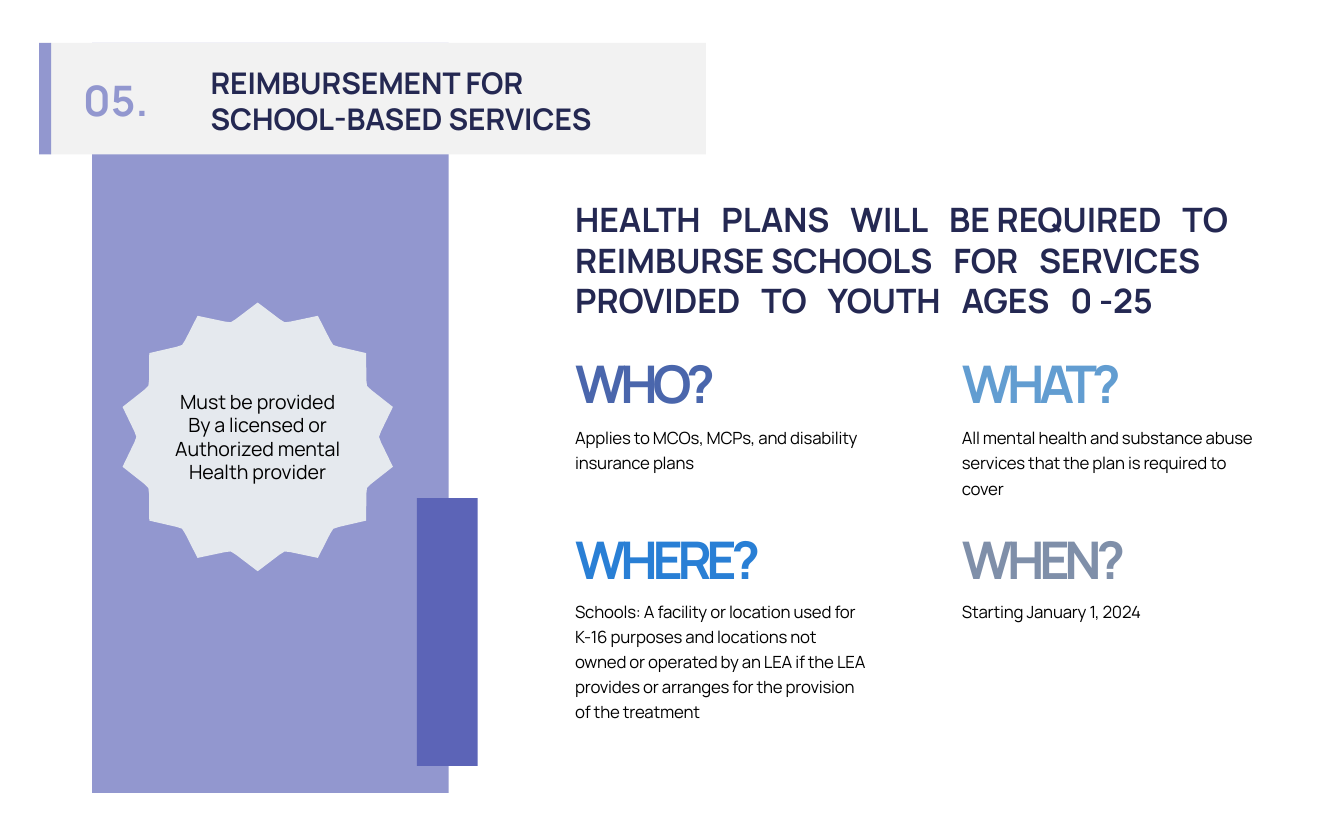
from math import cos, pi, sin

from pptx import Presentation
from pptx.dml.color import RGBColor
from pptx.enum.shapes import MSO_SHAPE
from pptx.enum.text import MSO_ANCHOR, MSO_AUTO_SIZE, PP_ALIGN
from pptx.util import Cm, Pt

RECT = MSO_SHAPE.RECTANGLE
TOP, MIDDLE, BOTTOM = MSO_ANCHOR.TOP, MSO_ANCHOR.MIDDLE, MSO_ANCHOR.BOTTOM
LEFT, CENTER = PP_ALIGN.LEFT, PP_ALIGN.CENTER
GROW = MSO_AUTO_SIZE.SHAPE_TO_FIT_TEXT

FONT = "Manrope"
BLACK = RGBColor(0x00, 0x00, 0x00)
NAVY = RGBColor(0x24, 0x28, 0x52)
LAVENDER = RGBColor(0x92, 0x97, 0xCF)
INDIGO = RGBColor(0x5C, 0x64, 0xB7)
LIGHT_GREY = RGBColor(0xF2, 0xF2, 0xF2)
PALE = RGBColor(0xE5, 0xE9, 0xEE)
WHO_BLUE = RGBColor(0x4A, 0x66, 0xAC)
WHAT_BLUE = RGBColor(0x62, 0x9D, 0xD1)
WHERE_BLUE = RGBColor(0x29, 0x7F, 0xD5)
WHEN_GREY = RGBColor(0x7F, 0x8F, 0xA9)

NUMBER = "05."
TITLE = "REIMBURSEMENT FOR SCHOOL-BASED SERVICES"
# Each line is a list of phrases set apart by wide gaps
STATEMENT = [
    ["HEALTH", "PLANS", "WILL", "BE REQUIRED", "TO"],
    ["REIMBURSE SCHOOLS", "FOR", "SERVICES"],
    ["PROVIDED", "TO", "YOUTH", "AGES", "0 -25"],
]
BADGE = ["Must be provided", "By a licensed or", "Authorized mental", "Health provider"]
# Question, colour, answer, lines in the answer; row by row
QUESTIONS = [
    [("WHO?", WHO_BLUE, "Applies to MCOs, MCPs, and disability insurance plans", 2),
     ("WHAT?", WHAT_BLUE, "All mental health and substance abuse services that "
      "the plan is required to cover", 3)],
    [("WHERE?", WHERE_BLUE, "Schools: A facility or location used for K-16 purposes "
      "and locations not owned or operated by an LEA if the LEA provides or arranges "
      "for the provision of the treatment", 5),
     ("WHEN?", WHEN_GREY, "Starting January 1, 2024", 1)],
]
COLUMNS = [10.62, 17.93]
ROWS = [(6.5, 7.87), (9.83, 11.15)]  # tops of question and answer

prs = Presentation()
prs.slide_width, prs.slide_height = Cm(25.4), Cm(15.88)
s = prs.slides.add_slide(prs.slide_layouts[6])


def paint(sp, color):
    sp.shadow.inherit = False
    sp.fill.solid()
    sp.fill.fore_color.rgb = color
    sp.line.fill.background()


def add_rect(x, y, w, h, color):
    paint(s.shapes.add_shape(RECT, Cm(x), Cm(y), Cm(w), Cm(h)), color)


def add_run(p, text, size, color=BLACK, bold=False, spacing=0):
    r = p.add_run()
    r.text = text
    f = r.font
    f.name, f.size, f.bold, f.color.rgb = FONT, Pt(size), bold, color
    if spacing:
        r._r.get_or_add_rPr().set("spc", str(round(spacing * 100)))


def add_text(x, y, w, h, text="", anchor=TOP, align=LEFT, wrap=True, leading=None, **style):
    tf = s.shapes.add_textbox(Cm(x), Cm(y), Cm(w), Cm(h)).text_frame
    tf.word_wrap, tf.vertical_anchor, tf.auto_size = wrap, anchor, GROW
    p = tf.paragraphs[0]
    p.alignment = align
    if leading:
        p.line_spacing = Pt(leading)
    if text:
        add_run(p, text, **style)
    return p


def add_badge(cx, cy, rx, ry, tips=14):
    """Star with pointed tips and softened inner corners."""
    outline = [(0, 1), (0.4, 0.89), (0.5, 0.875), (0.6, 0.89)]  # share of a tip, radius
    points = []
    for tip in range(tips):
        for share, radius in outline:
            a = 2 * pi * (tip + share) / tips
            points.append((Cm(cx + rx * radius * sin(a)), Cm(cy - ry * radius * cos(a))))
    builder = s.shapes.build_freeform(*points[0])
    builder.add_line_segments(points[1:])
    sp = builder.convert_to_shape()
    paint(sp, PALE)
    tf = sp.text_frame
    tf.word_wrap, tf.vertical_anchor = False, MIDDLE
    for i, line in enumerate(BADGE):
        p = tf.add_paragraph() if i else tf.paragraphs[0]
        p.alignment = CENTER
        add_run(p, line, 10.5)


add_rect(1.74, 0.81, 6.74, 14.18, LAVENDER)
add_rect(7.88, 9.42, 1.15, 5.06, INDIGO)

p = add_text(10.62, 3.61, 14, 2.57, anchor=BOTTOM)
heading = dict(size=18, color=NAVY, bold=True)
for i, phrases in enumerate(STATEMENT):
    if i:
        p.add_line_break()
    for j, phrase in enumerate(phrases):
        if j:
            add_run(p, " ", spacing=7.5, **heading)
        add_run(p, phrase, **heading)

for (question_y, answer_y), row in zip(ROWS, QUESTIONS):
    for x, (question, color, answer, lines) in zip(COLUMNS, row):
        add_text(x, question_y, 6.1, 1.45, question, anchor=BOTTOM,
                 size=27.8, color=color, bold=True, spacing=-2.9)
        add_text(x, answer_y, 6.05, 0.22 + 0.5 * lines, answer,
                 leading=13.5, size=9, spacing=-0.1)

add_rect(0.94, 0.81, 12.4, 2.11, LIGHT_GREY)
add_rect(0.74, 0.81, 0.23, 2.11, LAVENDER)
add_text(1.3, 1.27, 1.78, 1.22, NUMBER, anchor=MIDDLE, align=CENTER, wrap=False,
         size=22.5, color=LAVENDER, bold=True)
add_text(3.73, 1.07, 8.79, 1.63, TITLE, anchor=BOTTOM, size=16, color=NAVY, bold=True)

add_badge(4.87, 8.26, 2.62, 2.54)

prs.save("out.pptx")
